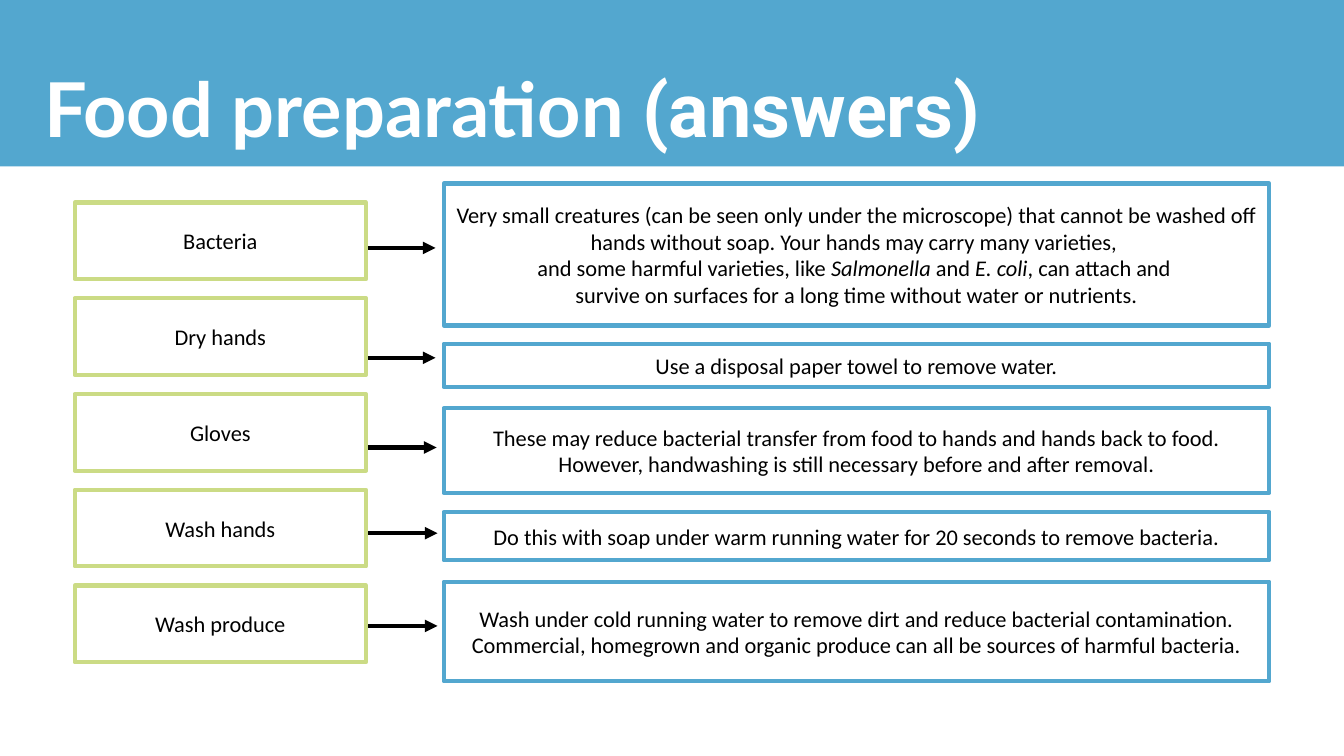
from lxml import etree
from pptx import Presentation, util as u
from pptx.dml.color import RGBColor
from pptx.enum import shapes, text
from pptx.oxml.ns import qn

COLORS = {"blue": "53A7CF", "green": "CBDB85", "white": "FFFFFF", "black": "000000"}
TERM_LEFT, TERM_TOP, TERM_W, TERM_H, TERM_PITCH = 0.74, 2.01, 2.89, 0.76, 0.95
MEANING_LEFT, MEANING_W = 4.4, 8.19

# term, arrow height, arrow end, meaning top, meaning height, meaning runs
ROWS = [
    ("Bacteria", 2.46, 4.32, 1.82, 1.41, [
        ("Very small creatures (can be seen only under the microscope) that cannot be "
         "washed off hands without soap. Your hands may carry many varieties, \n"
         "and some harmful varieties, like ", {}),
        ("Salmonella", {"italic": True}),
        (" and ", {}),
        ("E. coli", {"italic": True}),
        (", can attach and \nsurvive on surfaces for a long time without water or nutrients.", {})]),
    ("Dry hands", 3.55, 4.32, 3.41, 0.43, [
        ("Use a disposal paper towel to remove water.", {})]),
    ("Gloves", 4.44, 4.33, 4.05, 0.84, [
        ("These may reduce bacterial transfer from food to hands and hands back to food. "
         "However, handwashing is still necessary before and after removal.", {})]),
    ("Wash hands", 5.29, 4.34, 5.08, 0.48, [
        ("Do this with soap under warm running water for 20 seconds to remove bacteria.", {})]),
    ("Wash produce", 6.21, 4.34, 5.77, 0.99, [
        ("Wash under cold running water to remove dirt and reduce bacterial contamination. "
         "Commercial, homegrown and organic produce can all be sources of harmful bacteria.", {})]),
]


def write(sp, runs, size=16, font="Calibri", color="black", bold=False,
          align=text.PP_ALIGN.CENTER, spacing=1.0):
    """Fill a shape with one paragraph of (text, overrides) runs; newlines become line breaks."""
    tf = sp.text_frame
    tf.word_wrap = True
    tf.vertical_anchor = text.MSO_ANCHOR.MIDDLE
    p = tf.paragraphs[0]
    p.alignment, p.line_spacing = align, spacing
    for content, extra in runs:
        for i, line in enumerate(content.split("\n")):
            if i:
                p.add_line_break()
            r = p.add_run()
            r.text = line
            r.font.size, r.font.bold = u.Pt(size), bold
            r.font.name = extra.get("font", font)
            r.font.italic = extra.get("italic", False)
            r.font.color.rgb = RGBColor.from_string(COLORS[color])


def box(left, top, width, height, fill=None, line=None):
    sp = s.shapes.add_shape(shapes.MSO_SHAPE.RECTANGLE, *map(u.Inches, (left, top, width, height)))
    sp.shadow.inherit = False
    if fill:
        sp.fill.solid()
        sp.fill.fore_color.rgb = RGBColor.from_string(COLORS[fill])
    else:
        sp.fill.background()
    if line:
        sp.line.color.rgb = RGBColor.from_string(COLORS[line])
        sp.line.width = u.Pt(3)
    else:
        sp.line.fill.background()
    return sp


prs = Presentation()
prs.slide_width, prs.slide_height = u.Inches(13.33), u.Inches(7.5)
s = prs.slides.add_slide(prs.slide_layouts[6])

box(0, 0, 13.33, 1.65, fill="blue")
title = s.shapes.add_textbox(*map(u.Inches, (0.34, 0.4, 12.07, 1.45)))
write(title, [("Food preparation ", {}), ("(answers)", {"font": "Roboto"})], size=54,
      font="Lato", color="white", bold=True, align=text.PP_ALIGN.LEFT, spacing=0.9)

for i, (term, arrow_y, arrow_end, top, height, meaning) in enumerate(ROWS):
    arrow = s.shapes.add_connector(
        shapes.MSO_CONNECTOR.STRAIGHT,
        *map(u.Inches, (TERM_LEFT + TERM_W, arrow_y, arrow_end, arrow_y)))
    arrow.line.color.rgb = RGBColor.from_string(COLORS["black"])
    arrow.line.width = u.Pt(3)
    etree.SubElement(arrow.line._get_or_add_ln(), qn("a:tailEnd"), type="triangle")
    etree.SubElement(arrow._element.spPr, qn("a:effectLst"))

    write(box(TERM_LEFT, TERM_TOP + i * TERM_PITCH, TERM_W, TERM_H, line="green"), [(term, {})])
    write(box(MEANING_LEFT, top, MEANING_W, height, fill="white", line="blue"), meaning)

prs.save("out.pptx")
